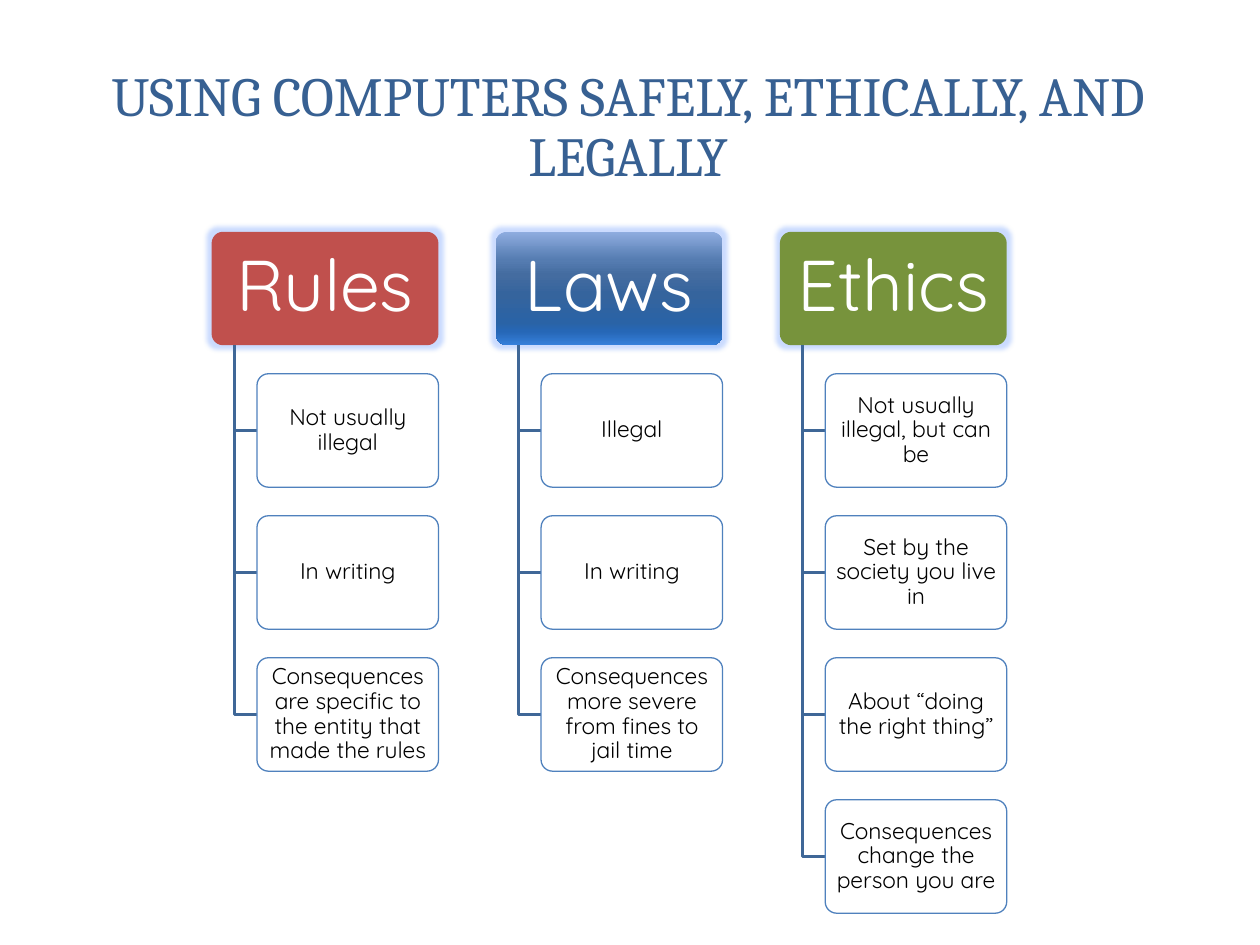
from dataclasses import dataclass

from lxml.etree import SubElement
from pptx import Presentation
from pptx.dml.color import RGBColor
from pptx.enum.shapes import MSO_SHAPE
from pptx.enum.text import MSO_ANCHOR, PP_ALIGN
from pptx.oxml.ns import qn
from pptx.util import Inches, Pt

SLIDE_WIDTH, SLIDE_HEIGHT = 10, 7.5
GRID_LEFT, GRID_TOP = 1.68, 1.84
COLUMN_STEP, ROW_STEP = 2.255, 1.127
HEADER_WIDTH, BOX_HEIGHT = 1.8, 0.9
INDENT = HEADER_WIDTH / 10
BLUE_GRADIENT = (
    (0, "8EACDF"), (25, "557CB1"), (38, "446CA0"), (55, "35649D"),
    (80, "2A63A6"), (88, "2667B6"), (100, "3680DB"),
)


@dataclass(frozen=True)
class Branch:
    """A heading, its fill colour or gradient, and the boxes below it."""
    heading: str
    fill: str | tuple
    items: tuple[str, ...]


BRANCHES = (
    Branch("Rules", "C0504D", (
        "Not usually illegal",
        "In writing",
        "Consequences are specific to the entity that made the rules",
    )),
    Branch("Laws", BLUE_GRADIENT, (
        "Illegal",
        "In writing",
        "Consequences more severe from fines to jail time",
    )),
    Branch("Ethics", "77933C", (
        "Not usually illegal, but can be",
        "Set by the society you live in",
        "About “doing the right thing”",
        "Consequences change the person you are",
    )),
)


def color(value: str) -> RGBColor:
    """Turn a hex string into a colour."""
    return RGBColor.from_string(value)


def write_text(shape, text: str, *, size: float, font: str, ink: str,
               spacing: float = 0.9, margins: tuple = (0.1, 0.05)) -> None:
    """Write one centred paragraph into a shape."""
    frame = shape.text_frame
    frame.word_wrap = True
    frame.vertical_anchor = MSO_ANCHOR.MIDDLE
    frame.margin_left = frame.margin_right = Inches(margins[0])
    frame.margin_top = frame.margin_bottom = Inches(margins[1])
    paragraph = frame.paragraphs[0]
    paragraph.alignment = PP_ALIGN.CENTER
    paragraph.line_spacing = spacing
    run = paragraph.add_run()
    run.text = text
    run.font.size = Pt(size)
    run.font.name = font
    run.font.color.rgb = color(ink)


def fill_gradient(shape, stops: tuple) -> None:
    """Fill a shape with a vertical gradient of the given stops."""
    shape.fill.gradient()
    gradient = shape._element.spPr.find(qn("a:gradFill"))
    stop_list = gradient.find(qn("a:gsLst"))
    for stop in list(stop_list):
        stop_list.remove(stop)
    for percent, value in stops:
        stop = SubElement(stop_list, qn("a:gs"), pos=str(percent * 1000))
        SubElement(stop, qn("a:srgbClr"), val=value)
    gradient.find(qn("a:lin")).set("ang", "5400000")


def add_glow(shape, value: str, radius: float, alpha: int) -> None:
    """Put a soft glow around a shape."""
    effects = shape._element.spPr.find(qn("a:effectLst"))
    glow = SubElement(effects, qn("a:glow"), rad=str(Pt(radius)))
    glow_color = SubElement(glow, qn("a:srgbClr"), val=value)
    SubElement(glow_color, qn("a:alpha"), val=str(alpha * 1000))


def add_box(slide, left: float, top: float, width: float):
    """Add a rounded box without shadow."""
    shape = slide.shapes.add_shape(
        MSO_SHAPE.ROUNDED_RECTANGLE,
        Inches(left), Inches(top), Inches(width), Inches(BOX_HEIGHT))
    shape.adjustments[0] = 0.1
    shape.shadow.inherit = False
    return shape


def add_heading(slide, branch: Branch, left: float) -> None:
    """Add the coloured heading of a branch."""
    shape = add_box(slide, left, GRID_TOP, HEADER_WIDTH)
    if isinstance(branch.fill, str):
        shape.fill.solid()
        shape.fill.fore_color.rgb = color(branch.fill)
    else:
        fill_gradient(shape, branch.fill)
    shape.line.fill.background()
    add_glow(shape, "7DA7FF", 5, 40)
    write_text(shape, branch.heading, size=41, font="Quicksand", ink="FFFFFF",
               margins=(0.11, 0.08))


def add_elbow(slide, left: float, bottom: float) -> None:
    """Draw the bent line from a heading down to an item."""
    start = GRID_TOP + BOX_HEIGHT
    builder = slide.shapes.build_freeform(Inches(left), Inches(start))
    builder.add_line_segments(
        [(Inches(left), Inches(bottom)), (Inches(left + INDENT), Inches(bottom))],
        close=False)
    shape = builder.convert_to_shape()
    shape.fill.background()
    shape.line.color.rgb = color("3F6797")
    shape.line.width = Pt(2)
    shape.shadow.inherit = False


def add_item(slide, text: str, left: float, top: float) -> None:
    """Add an outlined item box."""
    shape = add_box(slide, left, top, HEADER_WIDTH - 2 * INDENT)
    shape.fill.solid()
    shape.fill.fore_color.rgb = color("FFFFFF")
    shape.line.color.rgb = color("4F81BD")
    shape.line.width = Pt(0.75)
    write_text(shape, text, size=13, font="Quicksand", ink="000000",
               margins=(0.05, 0.04))


def add_branch(slide, branch: Branch, column: int) -> None:
    """Draw a heading with its items in one column of the grid."""
    left = GRID_LEFT + column * COLUMN_STEP
    add_heading(slide, branch, left)
    for row, text in enumerate(branch.items, start=1):
        top = GRID_TOP + row * ROW_STEP
        add_elbow(slide, left + INDENT, top + BOX_HEIGHT / 2)
        add_item(slide, text, left + 2 * INDENT, top)


def main() -> None:
    """Build and save the slide."""
    presentation = Presentation()
    presentation.slide_width = Inches(SLIDE_WIDTH)
    presentation.slide_height = Inches(SLIDE_HEIGHT)
    slide = presentation.slides.add_slide(presentation.slide_layouts[6])
    title = slide.shapes.add_textbox(
        Inches(0.47), Inches(0.45), Inches(9.03), Inches(1.14))
    write_text(title, "USING COMPUTERS SAFELY, ETHICALLY, AND LEGALLY",
               size=31.5, font="Cambria", ink="376092")
    for column, branch in enumerate(BRANCHES):
        add_branch(slide, branch, column)
    presentation.save("out.pptx")


if __name__ == "__main__":
    main()
